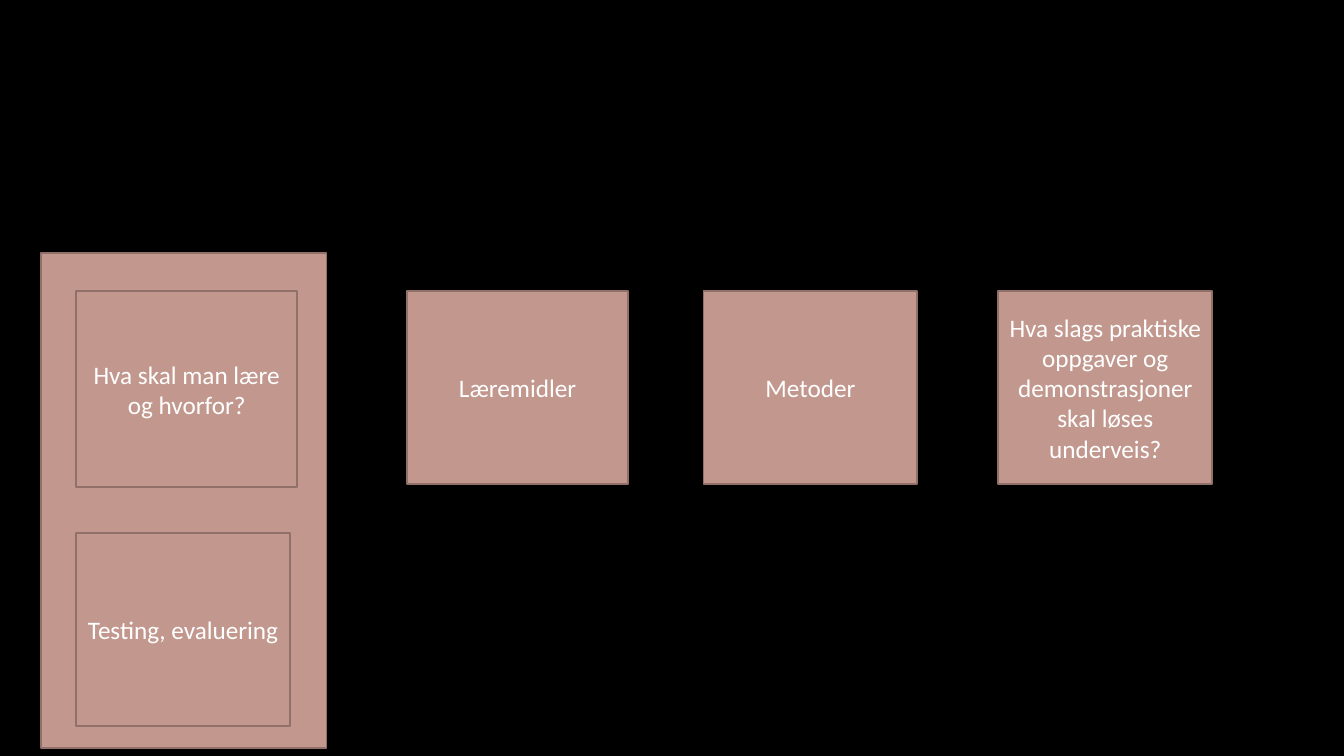
import pptx
import pptx.dml.color
import pptx.enum.shapes
import pptx.enum.text
import pptx.util

Cm = pptx.util.Cm
RGBColor = pptx.dml.color.RGBColor

BLACK = RGBColor(0x00, 0x00, 0x00)
WHITE = RGBColor(0xFF, 0xFF, 0xFF)
ROSE = RGBColor(0xC2, 0x98, 0x8E)
DARK_ROSE = RGBColor(0x90, 0x70, 0x69)

deck = pptx.Presentation()
deck.slide_width = Cm(33.87)
deck.slide_height = Cm(19.05)
page = deck.slides.add_slide(deck.slide_layouts[6])
page.background.fill.solid()
page.background.fill.fore_color.rgb = BLACK


def add_box(text, *, left, top, width, height):
    """Add a rose rectangle with centred white text, if any."""
    box = page.shapes.add_shape(
        pptx.enum.shapes.MSO_SHAPE.RECTANGLE,
        Cm(left), Cm(top), Cm(width), Cm(height))
    box.shadow.inherit = False
    box.fill.solid()
    box.fill.fore_color.rgb = ROSE
    box.line.color.rgb = DARK_ROSE
    box.line.width = pptx.util.Pt(1.25)
    if text:
        frame = box.text_frame
        frame.word_wrap = True
        frame.vertical_anchor = pptx.enum.text.MSO_ANCHOR.MIDDLE
        para = frame.paragraphs[0]
        para.alignment = pptx.enum.text.PP_ALIGN.CENTER
        span = para.add_run()
        span.text = text
        span.font.name = "Calibri"
        span.font.size = pptx.util.Pt(18)
        span.font.color.rgb = WHITE


# Panel behind the first column
add_box("", left=1.04, top=6.38, width=7.19, height=12.47)

# Upper row of questions
ROW_TOP = 7.34
BOX_HEIGHT = 4.85
WIDE, NARROW = 5.57, 5.39
FIRST_LEFT = 1.92
upper_row = [
    ("Hva skal man lære og hvorfor?", FIRST_LEFT, WIDE, 4.93),
    ("Læremidler", 10.26, WIDE, BOX_HEIGHT),
    ("Metoder", 17.73, NARROW, BOX_HEIGHT),
    ("Hva slags praktiske oppgaver og demonstrasjoner skal løses underveis?",
     25.16, NARROW, BOX_HEIGHT),
]
for text, left, width, height in upper_row:
    add_box(text, left=left, top=ROW_TOP, width=width, height=height)

# Evaluation below the first question
add_box("Testing, evaluering", left=FIRST_LEFT, top=13.44,
        width=NARROW, height=BOX_HEIGHT)

deck.save("out.pptx")
